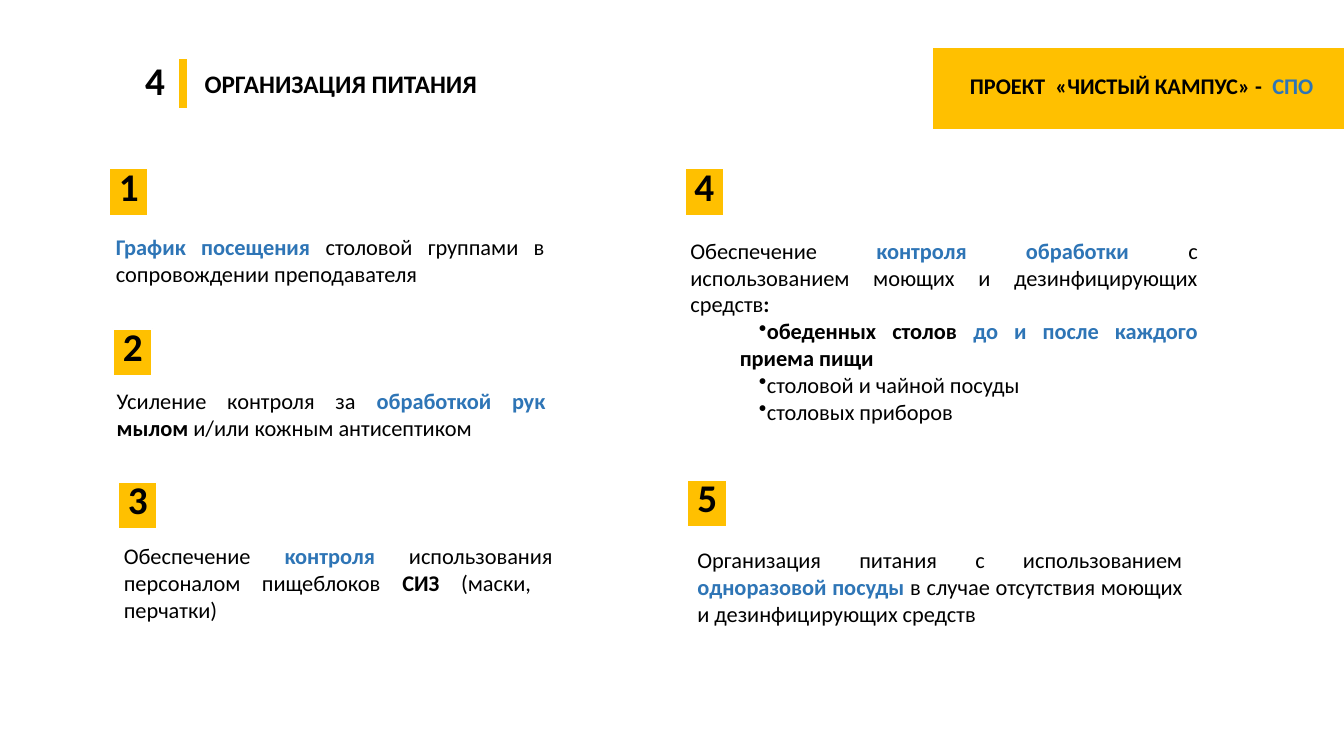
from dataclasses import dataclass

from lxml import etree
from pptx import Presentation
from pptx import util as u
from pptx.dml.color import RGBColor
from pptx.enum import shapes, text
from pptx.oxml.ns import qn

COLORS = {"ink": "000000", "accent": "2E75B6", "fill": "FFC000", "edge": "FFFFFF"}
FONT = "Calibri"
BODY, TITLE, NUMBER = 16, 18, 28
LEFT, CENTER, JUSTIFY = text.PP_ALIGN.LEFT, text.PP_ALIGN.CENTER, text.PP_ALIGN.JUSTIFY

prs = Presentation()
prs.slide_width, prs.slide_height = u.Inches(13.33), u.Inches(7.5)
slide = prs.slides.add_slide(prs.slide_layouts[6])


@dataclass(frozen=True)
class Box:
    """Percent shares of the slide's width and height."""
    x: float
    y: float
    w: float
    h: float

    def emu(self) -> tuple[int, ...]:
        sizes = (prs.slide_width, prs.slide_height) * 2
        return tuple(round(size * share / 100)
                     for size, share in zip(sizes, (self.x, self.y, self.w, self.h)))


@dataclass(frozen=True)
class Run:
    text: str
    color: str = "ink"
    bold: bool = False


@dataclass(frozen=True)
class Para:
    runs: tuple[Run, ...]
    bullet: bool = False


@dataclass(frozen=True)
class Measure:
    number: int
    badge_x: float
    badge_y: float
    box: Box
    paras: tuple[Para, ...]


def rgb(name: str) -> RGBColor:
    return RGBColor.from_string(COLORS[name])


def add_block(box: Box) -> None:
    sp = slide.shapes.add_shape(shapes.MSO_SHAPE.RECTANGLE, *box.emu())
    sp.shadow.inherit = False
    sp.fill.solid()
    sp.fill.fore_color.rgb = rgb("fill")
    sp.line.color.rgb = rgb("edge")
    sp.line.width = u.Pt(1.5)


def add_bullet(p) -> None:
    pPr = p._p.get_or_add_pPr()
    pPr.set("marL", str(u.Inches(0.49)))
    pPr.set("indent", str(u.Inches(0.19)))
    bullet = etree.Element(qn("a:buChar"), char="•")
    pPr.insert(0, bullet)


def add_text(box: Box, paras: tuple[Para, ...], size: int, align=LEFT) -> None:
    tf = slide.shapes.add_textbox(*box.emu()).text_frame
    tf.word_wrap = True
    for i, para in enumerate(paras):
        p = tf.paragraphs[0] if i == 0 else tf.add_paragraph()
        p.alignment = align
        if para.bullet:
            add_bullet(p)
        p.font.name, p.font.size = FONT, u.Pt(size)
        uniform = len({(run.color, run.bold) for run in para.runs}) == 1
        for run in para.runs:
            r = p.add_run()
            r.text = run.text
            font = p.font if uniform else r.font
            font.bold = run.bold
            font.color.rgb = rgb(run.color)


def add_label(box: Box, label: str, size: int) -> None:
    add_text(box, (Para((Run(label, bold=True),)),), size)


def add_measure(m: Measure) -> None:
    add_block(Box(m.badge_x, m.badge_y, 2.93, 6.27))
    add_label(Box(m.badge_x, m.badge_y - 1.47, 1.65, 7.6), str(m.number), NUMBER)
    add_text(m.box, m.paras, BODY, JUSTIFY)


MEASURES = (
    Measure(1, 8.1, 22.27, Box(7.88, 30.13, 33.38, 8.53), (
        Para((Run("График посещения ", "accent", True),
              Run("столовой группами в сопровождении преподавателя"))),)),
    Measure(2, 8.4, 43.47, Box(7.95, 50.53, 33.38, 8.53), (
        Para((Run("Усиление контроля за "),
              Run("обработкой рук ", "accent", True),
              Run("мылом", bold=True),
              Run(" и/или кожным антисептиком"))),)),
    Measure(3, 8.78, 63.73, Box(8.48, 71.07, 33.38, 12.13), (
        Para((Run("Обеспечение "),
              Run("контроля ", "accent", True),
              Run("использования персоналом пищеблоков "),
              Run("СИЗ ", bold=True),
              Run("(маски,  перчатки)"))),)),
    Measure(4, 50.93, 22.27, Box(50.63, 30.67, 39.23, 26.53), (
        Para((Run("Обеспечение "),
              Run("контроля обработки ", "accent", True),
              Run("с использованием моющих и дезинфицирующих средств"),
              Run(":", bold=True))),
        Para((Run("обеденных столов ", bold=True),
              Run("до и после каждого", "accent", True),
              Run(" приема пищи", bold=True)), bullet=True),
        Para((Run("столовой и чайной посуды"),), bullet=True),
        Para((Run("столовых приборов"),), bullet=True))),
    Measure(5, 51.15, 63.47, Box(51.15, 71.6, 37.58, 12.13), (
        Para((Run("Организация питания с использованием "),
              Run("одноразовой посуды ", "accent", True),
              Run("в случае отсутствия моющих и дезинфицирующих средств"))),)),
)


def main() -> None:
    add_label(Box(10.05, 6.8, 2.78, 7.6), "4", NUMBER)
    add_block(Box(13.28, 7.6, 0.75, 6.8))
    add_label(Box(14.48, 8.4, 52.88, 5.33), "ОРГАНИЗАЦИЯ ПИТАНИЯ", TITLE)
    add_block(Box(69.38, 6.27, 32.33, 10.93))
    add_text(Box(69.9, 8.93, 30.08, 4.93), (
        Para((Run("ПРОЕКТ  «ЧИСТЫЙ КАМПУС» -  ", bold=True),
              Run("СПО", "accent", True))),), BODY, CENTER)
    for measure in MEASURES:
        add_measure(measure)
    prs.save("out.pptx")


if __name__ == "__main__":
    main()
